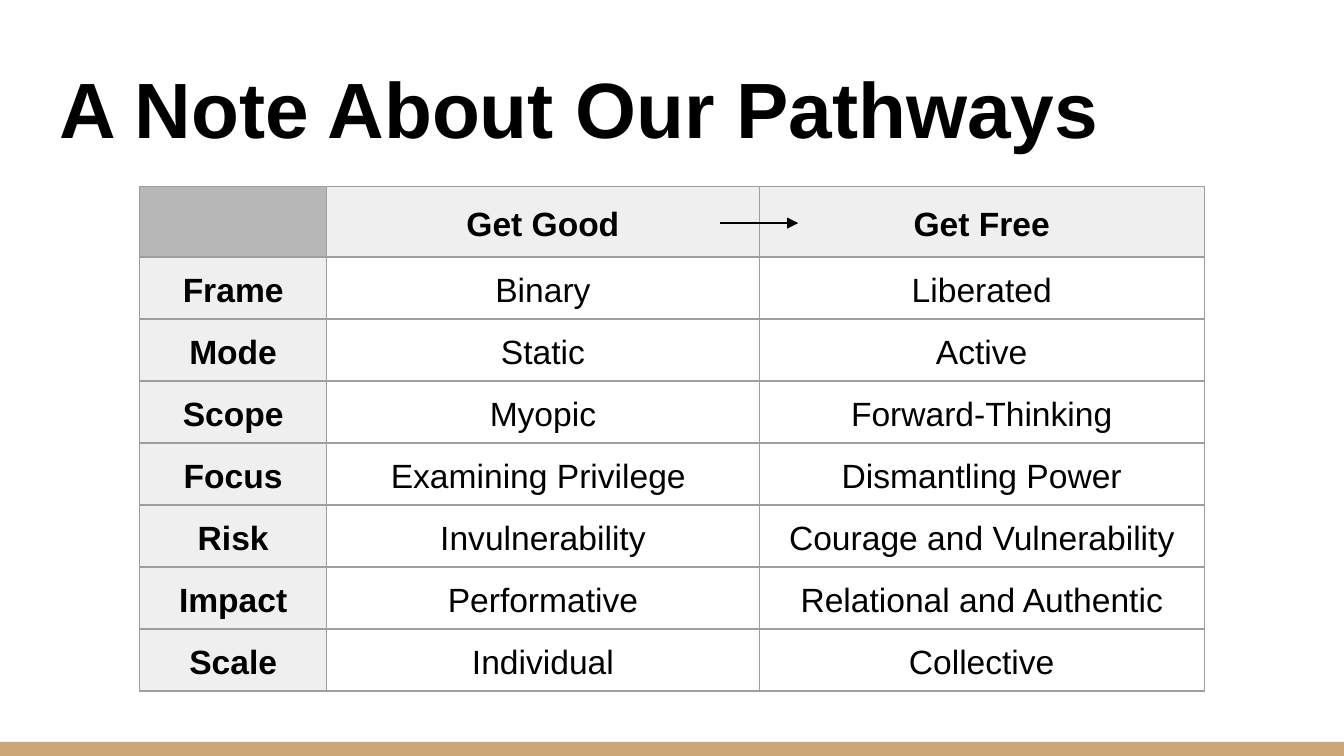
import dataclasses

import lxml.etree
import pptx
import pptx.dml.color
import pptx.enum.shapes
import pptx.enum.text
import pptx.oxml
import pptx.oxml.ns
import pptx.util

Inches = pptx.util.Inches
Pt = pptx.util.Pt
rgb = pptx.dml.color.RGBColor.from_string
qn = pptx.oxml.ns.qn
ALIGN = pptx.enum.text.PP_ALIGN
ANCHOR = pptx.enum.text.MSO_ANCHOR


@dataclasses.dataclass(frozen=True)
class Theme:
    font: str = "Arial"
    title_size: int = 42
    table_size: int = 18
    background: str = "FFFFFF"
    text: str = "000000"
    bar: str = "CCA677"
    corner: str = "B7B7B7"
    heading: str = "EFEFEF"
    border: str = "9E9E9E"
    line_width: float = 0.75


theme = Theme()


def write_text(frame, text, size, bold=False, align=ALIGN.LEFT, spacing=1.0):
    paragraph = frame.paragraphs[0]
    paragraph.alignment = align
    paragraph.line_spacing = spacing
    run = paragraph.add_run()
    run.text = text
    run.font.name = theme.font
    run.font.size = Pt(size)
    run.font.bold = bold
    run.font.color.rgb = rgb(theme.text)


def add_borders(cell):
    properties = cell._tc.get_or_add_tcPr()
    for side in ("lnL", "lnR", "lnT", "lnB"):
        line = lxml.etree.SubElement(
            properties, qn(f"a:{side}"), w=str(Pt(theme.line_width)))
        fill = lxml.etree.SubElement(line, qn("a:solidFill"))
        lxml.etree.SubElement(fill, qn("a:srgbClr"), val=theme.border)


# Widescreen 16:9 slide
presentation = pptx.Presentation()
presentation.slide_width = Inches(10)
presentation.slide_height = Inches(10) * 9 // 16
slide = presentation.slides.add_slide(presentation.slide_layouts[5])
slide.background.fill.solid()
slide.background.fill.fore_color.rgb = rgb(theme.background)

# Bottom bar
bar_top = Inches(5.52)
bar = slide.shapes.add_shape(
    pptx.enum.shapes.MSO_SHAPE.RECTANGLE, Inches(0), bar_top,
    presentation.slide_width, presentation.slide_height - bar_top)
bar.shadow.inherit = False
bar.fill.solid()
bar.fill.fore_color.rgb = rgb(theme.bar)
bar.line.fill.background()

# Title
title = slide.shapes.title
title.left, title.top = Inches(0.34), Inches(0.35)
title.width, title.height = Inches(9.32), Inches(0.9)
frame = title.text_frame
frame.word_wrap = True
frame.auto_size = pptx.enum.text.MSO_AUTO_SIZE.NONE
frame.vertical_anchor = ANCHOR.BOTTOM
frame.margin_left = frame.margin_right = Inches(0.1)
frame.margin_top = frame.margin_bottom = Inches(0.1)
write_text(frame, "A Note About Our Pathways", theme.title_size, bold=True)

# Pathways table
rows = [
    ("", "Get Good", "Get Free"),
    ("Frame", "Binary", "Liberated"),
    ("Mode", "Static", "Active"),
    ("Scope", "Myopic", "Forward-Thinking"),
    ("Focus", "Examining Privilege ", "Dismantling Power"),
    ("Risk", "Invulnerability", "Courage and Vulnerability"),
    ("Impact", "Performative", "Relational and Authentic"),
    ("Scale", "Individual", "Collective"),
]
column_widths = [1.39, 3.22, 3.31]
table = slide.shapes.add_table(
    len(rows), len(column_widths), Inches(1.04), Inches(1.39),
    Inches(sum(column_widths)), Inches(0.42 * len(rows))).table
for column, width in zip(table.columns, column_widths):
    column.width = Inches(width)

for row_index, row in enumerate(rows):
    for column_index, text in enumerate(row):
        cell = table.cell(row_index, column_index)
        is_heading = row_index == 0 or column_index == 0
        margin = Inches(0.1 if row_index == 0 else 0.07)
        cell.margin_left = cell.margin_right = margin
        cell.margin_top = cell.margin_bottom = margin
        cell.vertical_anchor = ANCHOR.MIDDLE
        add_borders(cell)
        if is_heading:
            cell.fill.solid()
            cell.fill.fore_color.rgb = rgb(theme.heading if text else theme.corner)
        else:
            cell.fill.background()
        if text:
            write_text(cell.text_frame, text, theme.table_size, bold=is_heading,
                       align=ALIGN.CENTER, spacing=1.15)

# Arrow from Get Good to Get Free
arrow = slide.shapes.add_connector(
    pptx.enum.shapes.MSO_CONNECTOR.STRAIGHT,
    Inches(5.36), Inches(1.66), Inches(5.94), Inches(1.66))
arrow.line.color.rgb = rgb(theme.text)
arrow.line.width = Pt(theme.line_width)
lxml.etree.SubElement(arrow.line._get_or_add_ln(), qn("a:tailEnd"), type="triangle")
lxml.etree.SubElement(arrow._element.spPr, qn("a:effectLst"))

presentation.save("out.pptx")
